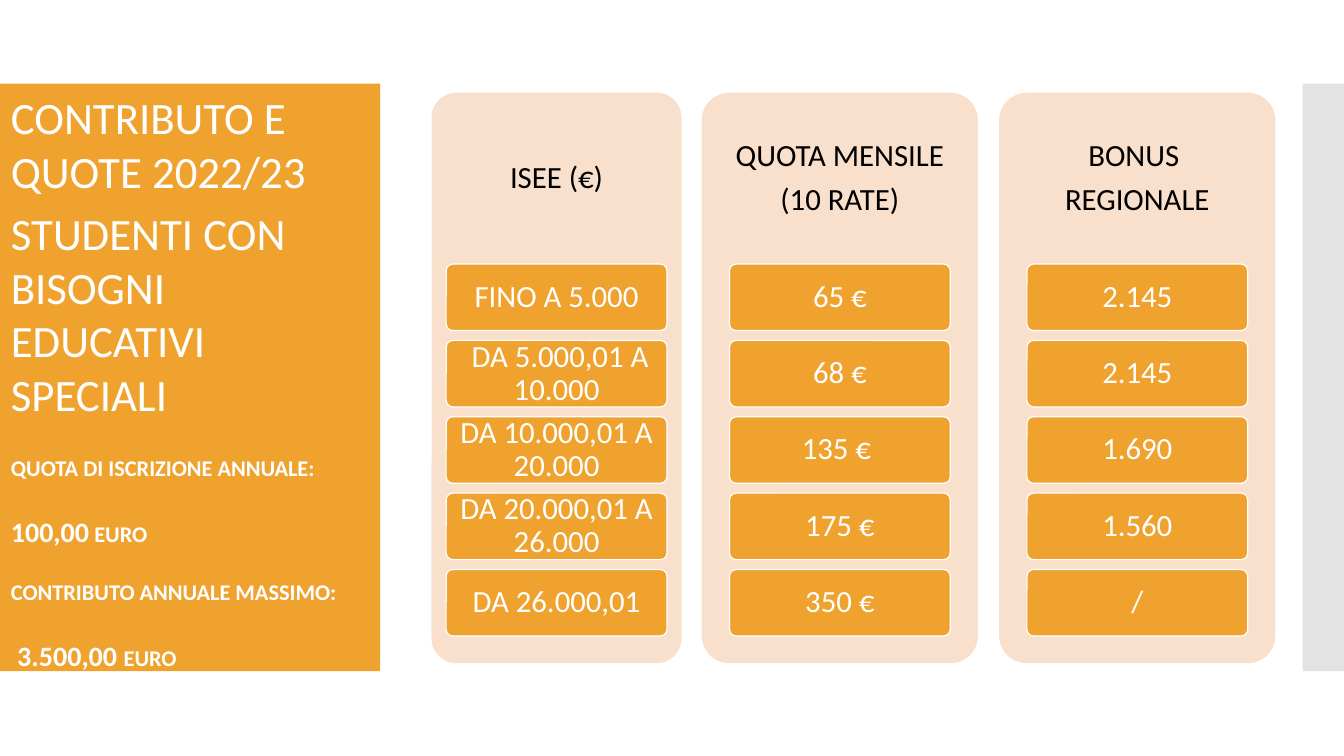
from dataclasses import dataclass
from typing import Any

from lxml.etree import SubElement
from pptx import Presentation
from pptx.dml.color import RGBColor
from pptx.enum.shapes import MSO_SHAPE
from pptx.enum.text import MSO_ANCHOR, PP_ALIGN
from pptx.oxml.ns import qn
from pptx.util import Inches, Pt

COLORS = {"orange": "F0A22E", "peach": "F9E0CD", "gray": "C8C8C8",
          "white": "FFFFFF", "black": "000000"}
FONT = "Calibri"

CARD_TOP, CARD_HEIGHT, HEADER_HEIGHT = 0.92, 5.66, 1.7
CELL_TOP, CELL_WIDTH, CELL_HEIGHT = 2.62, 2.19, 0.66
ROW_PITCH = (5.65 - CELL_TOP) / 4

# Paragraph formats
TITLE_FORMAT = {"space_after": Pt(6)}
FEE_FORMAT = {"line_spacing": 1.5, "space_before": Pt(12)}
CARD_FORMAT = {"alignment": PP_ALIGN.CENTER, "line_spacing": 0.9, "space_after": Pt(7.7)}


@dataclass
class Area:
    left: float
    top: float
    width: float
    height: float

    def lengths(self) -> list[Any]:
        return [Inches(value) for value in (self.left, self.top, self.width, self.height)]


@dataclass
class Span:
    text: str
    size: float
    color: str = "white"
    bold: bool = False


@dataclass
class Column:
    left: float
    width: float
    heading: list[str]
    values: list[str]


COLUMNS = [
    Column(4.28, 2.48, ["ISEE (€)"],
           ["FINO A 5.000", " DA 5.000,01 A 10.000", "DA 10.000,01 A 20.000",
            "DA 20.000,01 A 26.000", "DA 26.000,01"]),
    Column(6.96, 2.74, ["QUOTA MENSILE", "(10 RATE)"],
           ["65 €", "68 €", "135 € ", "175 €", "350 €"]),
    Column(9.91, 2.74, ["BONUS ", "REGIONALE"],
           ["2.145", "2.145", "1.690", "1.560", "/"]),
]

TITLE = [
    [Span("CONTRIBUTO E QUOTE 2022/23", 32)],
    [Span("STUDENTI CON BISOGNI EDUCATIVI SPECIALI", 32)],
]
FEES = [
    [Span("QUOTA DI ISCRIZIONE ANNUALE:", 16, bold=True)],
    [Span("100,00", 20, bold=True), Span(" EURO", 16, bold=True)],
    [Span("CONTRIBUTO ANNUALE MASSIMO:", 16, bold=True)],
    [Span(" 3.500,00 ", 20, bold=True), Span("EURO", 16, bold=True)],
]


def rgb(color: str) -> RGBColor:
    return RGBColor.from_string(COLORS[color])


def set_values(target: Any, values: dict[str, Any]) -> None:
    for name, value in values.items():
        setattr(target, name, value)


def write(frame: Any, paragraphs: list[list[Span]], para_format: dict[str, Any],
          margins: tuple[float, float] = (0.1, 0.05), anchor: Any = MSO_ANCHOR.TOP) -> None:
    side, edge = (Inches(margin) for margin in margins)
    set_values(frame, {"word_wrap": True, "vertical_anchor": anchor,
                       "margin_left": side, "margin_right": side,
                       "margin_top": edge, "margin_bottom": edge})
    for index, spans in enumerate(paragraphs):
        para = frame.add_paragraph() if index else frame.paragraphs[0]
        set_values(para, para_format)
        for span in spans:
            run = para.add_run()
            run.text = span.text
            set_values(run.font, {"name": FONT, "size": Pt(span.size), "bold": span.bold})
            run.font.color.rgb = rgb(span.color)


def add_block(page: Any, area: Area, color: str, rounded: bool = False,
              outlined: bool = False) -> Any:
    kind = MSO_SHAPE.ROUNDED_RECTANGLE if rounded else MSO_SHAPE.RECTANGLE
    block = page.shapes.add_shape(kind, *area.lengths())
    block.shadow.inherit = False
    block.fill.solid()
    block.fill.fore_color.rgb = rgb(color)
    if rounded:
        block.adjustments[0] = 0.1
    if outlined:
        block.line.color.rgb = rgb("white")
        block.line.width = Pt(0.85)
    else:
        block.line.fill.background()
    return block


def add_text(page: Any, area: Area, paragraphs: list[list[Span]],
             para_format: dict[str, Any], **layout: Any) -> None:
    box = page.shapes.add_textbox(*area.lengths())
    write(box.text_frame, paragraphs, para_format, **layout)


def add_column(page: Any, column: Column) -> None:
    add_block(page, Area(column.left, CARD_TOP, column.width, CARD_HEIGHT), "peach", rounded=True)
    add_text(page, Area(column.left, CARD_TOP, column.width, HEADER_HEIGHT),
             [[Span(line, 22, "black")] for line in column.heading], CARD_FORMAT,
             margins=(0.09, 0.09), anchor=MSO_ANCHOR.MIDDLE)
    cell_left = column.left + (column.width - CELL_WIDTH) / 2
    for row, value in enumerate(column.values):
        area = Area(cell_left, CELL_TOP + row * ROW_PITCH, CELL_WIDTH, CELL_HEIGHT)
        cell = add_block(page, area, "orange", rounded=True, outlined=True)
        write(cell.text_frame, [[Span(value, 22)]], CARD_FORMAT,
              margins=(0.06, 0.05), anchor=MSO_ANCHOR.MIDDLE)


def main() -> None:
    deck = Presentation()
    deck.slide_width, deck.slide_height = Inches(13.33), Inches(7.5)
    page = deck.slides.add_slide(deck.slide_layouts[6])

    # Side bands
    add_block(page, Area(0, 0.83, 3.77, 5.83), "orange")
    band = add_block(page, Area(12.92, 0.83, 0.41, 5.83), "gray")
    band_color = band.fill._xPr.find(qn("a:solidFill"))[0]
    SubElement(band_color, qn("a:alpha"), val="50000")

    # Title and annual fees
    add_text(page, Area(0.01, 0.84, 3.66, 3.67), TITLE, TITLE_FORMAT)
    add_text(page, Area(0.01, 4.32, 5.51, 2.46), FEES, FEE_FORMAT)

    # Fee columns
    for column in COLUMNS:
        add_column(page, column)

    deck.save("out.pptx")


if __name__ == "__main__":
    main()
